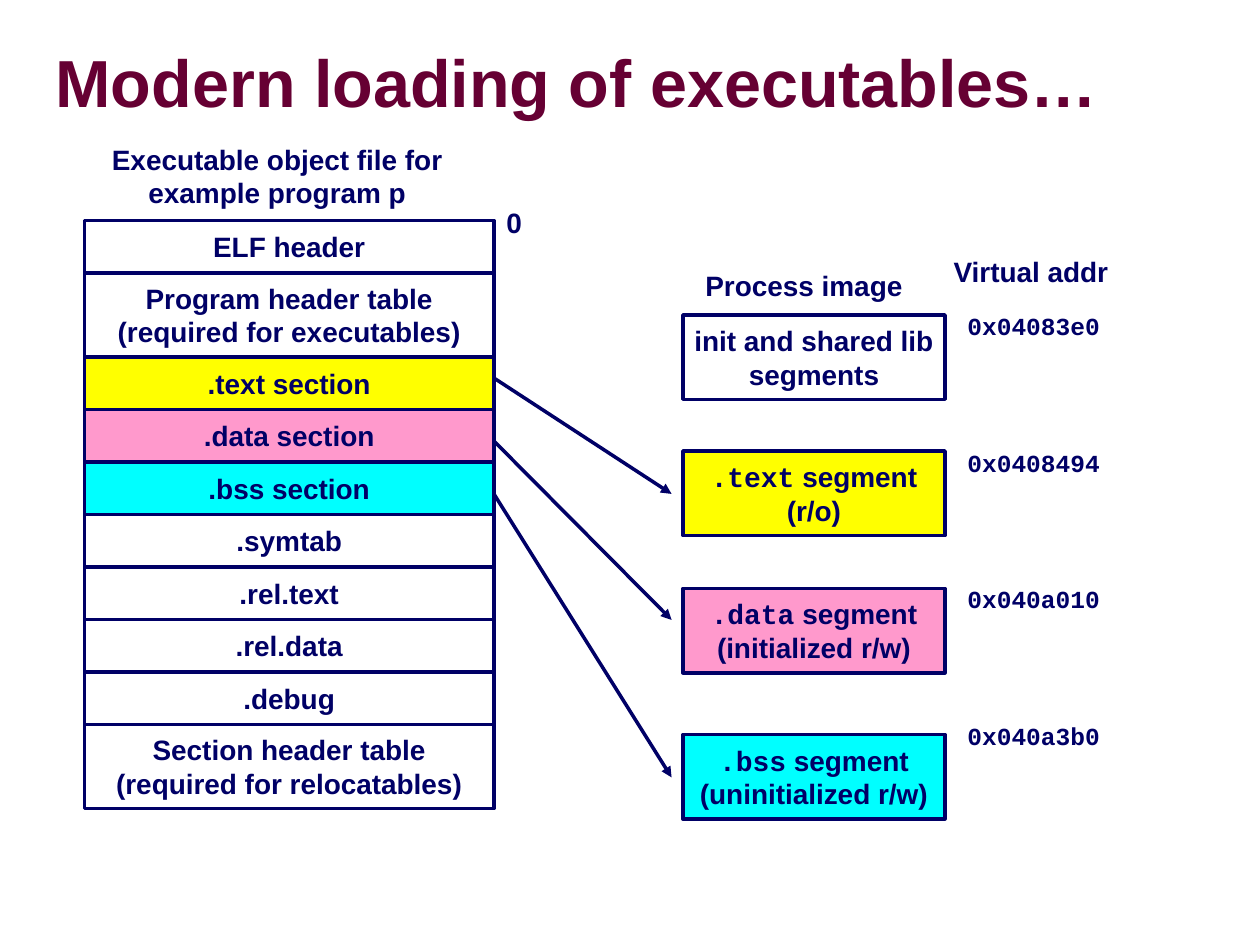
from dataclasses import dataclass

from lxml import etree
from pptx import Presentation
from pptx.dml.color import RGBColor
from pptx.enum.shapes import MSO_CONNECTOR, MSO_SHAPE
from pptx.enum.text import MSO_ANCHOR, MSO_AUTO_SIZE, PP_ALIGN
from pptx.oxml.ns import qn
from pptx.util import Inches, Pt

RECT = MSO_SHAPE.RECTANGLE
LINE = MSO_CONNECTOR.STRAIGHT
LEFT, MID = PP_ALIGN.LEFT, PP_ALIGN.CENTER
TOP, CENTER = MSO_ANCHOR.TOP, MSO_ANCHOR.MIDDLE
GROW = MSO_AUTO_SIZE.SHAPE_TO_FIT_TEXT


@dataclass(frozen=True)
class Theme:
    ink: str = "000066"
    title: str = "660033"
    white: str = "FFFFFF"
    text: str = "FFFF00"
    data: str = "FF99CC"
    bss: str = "00FFFF"
    sans: str = "Arial"
    mono: str = "Courier New"
    head: int = 38
    body: int = 16
    code: int = 14
    rule: int = 2


T = Theme()

ROWS = [
    (["ELF header"], T.white),
    (["Program header table", "(required for executables)"], T.white),
    ([".text section"], T.text),
    ([".data section"], T.data),
    ([".bss section"], T.bss),
    ([".symtab"], T.white),
    ([".rel.text"], T.white),
    ([".rel.data"], T.white),
    ([".debug"], T.white),
    (["Section header table", "(required for relocatables)"], T.white),
]

PARTS = [
    (2.5, "", "init and shared lib", "segments", T.white, "0x04083e0"),
    (3.58, ".text", " segment", "(r/o)", T.text, "0x0408494"),
    (4.67, ".data", " segment", "(initialized r/w)", T.data, "0x040a010"),
    (5.83, ".bss", " segment", "(uninitialized r/w)", T.bss, "0x040a3b0"),
]

LINKS = [(3, 3.92), (3.5, 4.92), (3.92, 6.17)]


def paint(color):
    return RGBColor.from_string(color)


def write(frame, lines, font=T.sans, size=T.body, color=T.ink,
          align=MID, anchor=CENTER, wrap=False, code="", space=None):
    frame.word_wrap = wrap
    frame.vertical_anchor = anchor
    for i, line in enumerate(lines):
        para = frame.add_paragraph() if i else frame.paragraphs[0]
        para.alignment = align
        if space:
            para.line_spacing = space
        runs = [(line, font)]
        if code and i == 0:
            runs.insert(0, (code, T.mono))
        for words, face in runs:
            run = para.add_run()
            run.text = words
            run.font.name = face
            run.font.size = Pt(size)
            run.font.bold = True
            run.font.color.rgb = paint(color)


def add_box(slide, x, y, w, h, lines, fill, code=""):
    box = slide.shapes.add_shape(RECT, Inches(x), Inches(y), Inches(w), Inches(h))
    box.shadow.inherit = False
    box.fill.solid()
    box.fill.fore_color.rgb = paint(fill)
    box.line.color.rgb = paint(T.ink)
    box.line.width = Pt(T.rule)
    write(box.text_frame, lines, code=code)


def add_label(slide, x, y, w, h, lines, **style):
    label = slide.shapes.add_textbox(Inches(x), Inches(y), Inches(w), Inches(h))
    write(label.text_frame, lines, **{"align": LEFT, "anchor": TOP, **style})
    label.text_frame.auto_size = GROW


def add_arrow(slide, x1, y1, x2, y2):
    arrow = slide.shapes.add_connector(
        LINE, Inches(x1), Inches(y1), Inches(x2), Inches(y2))
    arrow.line.color.rgb = paint(T.ink)
    arrow.line.width = Pt(T.rule)
    edge = arrow._element.spPr.find(qn("a:ln"))
    etree.SubElement(edge, qn("a:tailEnd"), type="triangle")
    etree.SubElement(arrow._element.spPr, qn("a:effectLst"))


def add_title(slide, words):
    box = slide.shapes.add_textbox(
        Inches(0.44), Inches(0.27), Inches(9.51), Inches(0.83))
    frame = box.text_frame
    frame.margin_left = frame.margin_right = 0
    frame.margin_top = frame.margin_bottom = 0
    write(frame, [words], size=T.head, color=T.title, align=LEFT,
          wrap=True, space=0.87)


def add_file(slide):
    add_label(slide, 0.76, 1.08, 2.88, 0.64,
              ["Executable object file for ", "example program p"], align=MID)
    y = 1.75
    for lines, fill in ROWS:
        h = 1 / 6 + len(lines) / 4
        add_box(slide, 0.67, y, 3.25, h, lines, fill)
        y += h
    add_label(slide, 3.92, 1.58, 0.32, 0.37, ["0"])


def add_image(slide):
    add_label(slide, 5.5, 2.08, 1.8, 0.37, ["Process image"])
    add_label(slide, 7.47, 1.97, 1.43, 0.37, ["Virtual addr"])
    for i, (y, code, name, note, fill, addr) in enumerate(PARTS):
        add_box(slide, 5.42, y, 2.08, 0.67, [name, note], fill, code)
        add_label(slide, 7.58, 2.42 + i * 13 / 12, 1.26, 0.34, [addr],
                  font=T.mono, size=T.code)


def main():
    deck = Presentation()
    deck.slide_width = Inches(10)
    deck.slide_height = Inches(7.5)
    slide = deck.slides.add_slide(deck.slide_layouts[6])
    add_title(slide, "Modern loading of executables…")
    add_file(slide)
    add_image(slide)
    for start, end in LINKS:
        add_arrow(slide, 3.92, start, 5.33, end)
    deck.save("out.pptx")


if __name__ == "__main__":
    main()
